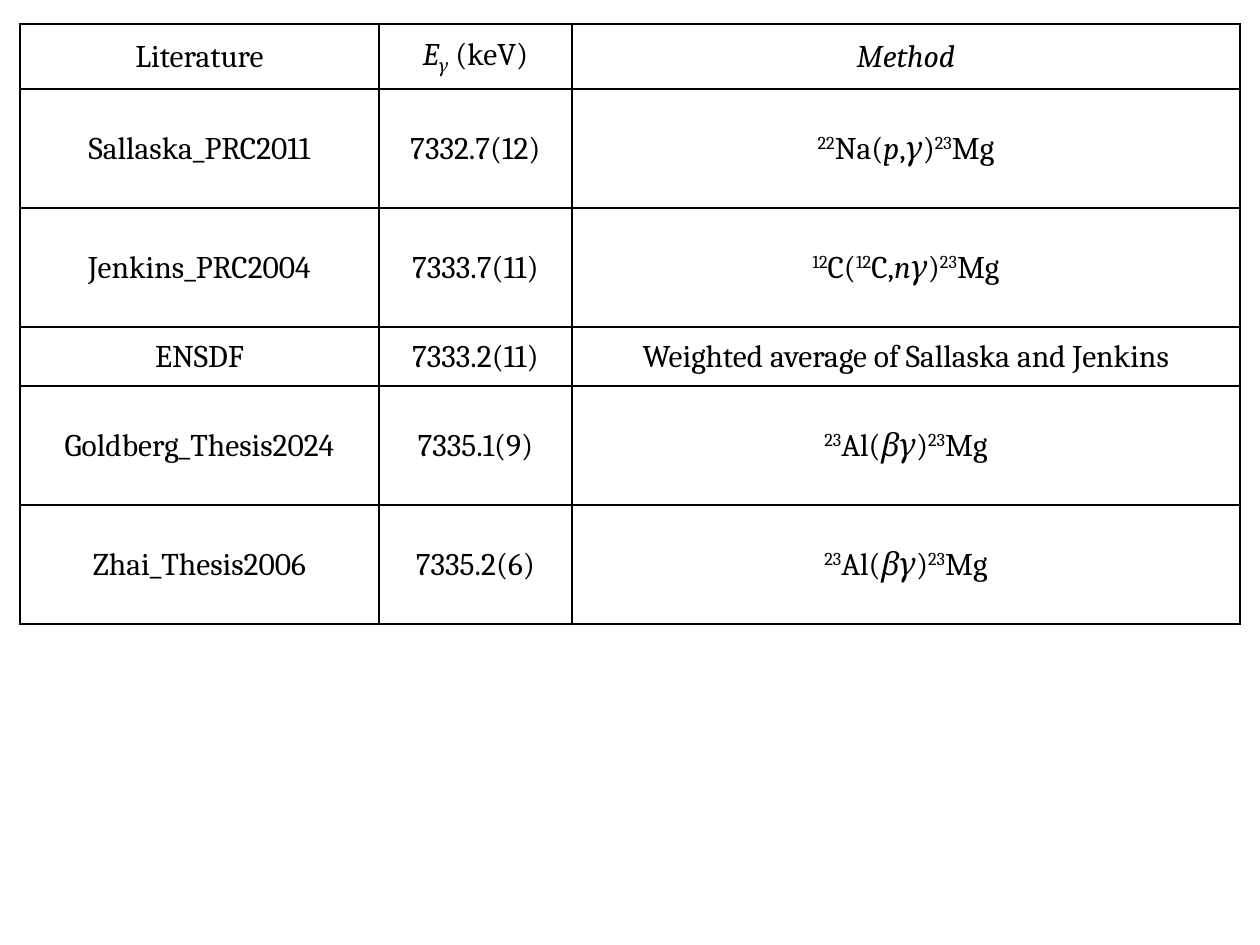
from lxml.etree import SubElement
from pptx import Presentation
from pptx.dml.color import RGBColor
from pptx.enum.text import MSO_ANCHOR, PP_ALIGN
from pptx.oxml import parse_xml
from pptx.oxml.ns import nsdecls
from pptx.util import Emu, Pt

SCALE = 914400 / 126
BLACK = RGBColor(0, 0, 0)
FONT = {"name": "Cambria", "size": Pt(18), "bold": False}
CELL = {
    "margin_left": Emu(9525),
    "margin_right": Emu(9525),
    "margin_top": Emu(9525),
    "margin_bottom": 0,
    "vertical_anchor": MSO_ANCHOR.MIDDLE,
}
BASELINES = {"sup": "30000", "sub": "-25000"}
COLUMN_WIDTHS = [359, 193, 668]
ROW_HEIGHTS = [65, 119, 119, 59, 119, 119]

MAGNESIUM = [(")", ""), ("23", "sup"), ("Mg", "")]
BETA_DECAY = [("23", "sup"), ("Al(", ""), ("βγ", "italic"), *MAGNESIUM]
PROTON_CAPTURE = [("22", "sup"), ("Na(", ""), ("p", "italic"), (",", ""),
                  ("γ", "italic"), *MAGNESIUM]
CARBON_FUSION = [("12", "sup"), ("C(", ""), ("12", "sup"), ("C,", ""),
                 ("nγ", "italic"), *MAGNESIUM]
GAMMA_ENERGY = [("E", "italic"), ("γ", "italic sub"), (" (keV)", "")]

ROWS = [
    ["Literature", GAMMA_ENERGY, [("Method", "italic")]],
    ["Sallaska_PRC2011", "7332.7(12)", PROTON_CAPTURE],
    ["Jenkins_PRC2004", "7333.7(11)", CARBON_FUSION],
    ["ENSDF", "7333.2(11)", "Weighted average of Sallaska and Jenkins"],
    ["Goldberg_Thesis2024", "7335.1(9)", BETA_DECAY],
    ["Zhai_Thesis2006", "7335.2(6)", BETA_DECAY],
]


def px(length):
    return Emu(round(length * SCALE))


def add_borders(cell):
    properties = cell._tc.get_or_add_tcPr()
    for position, side in enumerate("LRTB"):
        line = parse_xml(f'<a:ln{side} {nsdecls("a")} w="12700"/>')
        fill = SubElement(line, f"{{{line.nsmap['a']}}}solidFill")
        SubElement(fill, f"{{{line.nsmap['a']}}}srgbClr", val=str(BLACK))
        properties.insert(position, line)


deck = Presentation()
deck.slide_width, deck.slide_height = px(1260), px(945)
page = deck.slides.add_slide(deck.slide_layouts[6])

table = page.shapes.add_table(
    len(ROWS), len(COLUMN_WIDTHS), px(20), px(24),
    px(sum(COLUMN_WIDTHS)), px(sum(ROW_HEIGHTS)),
).table
table.first_row = False
table.horz_banding = False
for column, width in zip(table.columns, COLUMN_WIDTHS):
    column.width = px(width)
for row, height in zip(table.rows, ROW_HEIGHTS):
    row.height = px(height)

for row, contents in zip(table.rows, ROWS):
    for cell, content in zip(row.cells, contents):
        for name, value in CELL.items():
            setattr(cell, name, value)
        cell.fill.background()
        add_borders(cell)
        para = cell.text_frame.paragraphs[0]
        para.alignment = PP_ALIGN.CENTER
        pieces = [(content, "")] if isinstance(content, str) else content
        for text, style in pieces:
            span = para.add_run()
            span.text = text
            for name, value in FONT.items():
                setattr(span.font, name, value)
            span.font.color.rgb = BLACK
            span.font.italic = "italic" in style
            for shift, baseline in BASELINES.items():
                if shift in style:
                    span.font._element.set("baseline", baseline)

deck.save("out.pptx")
